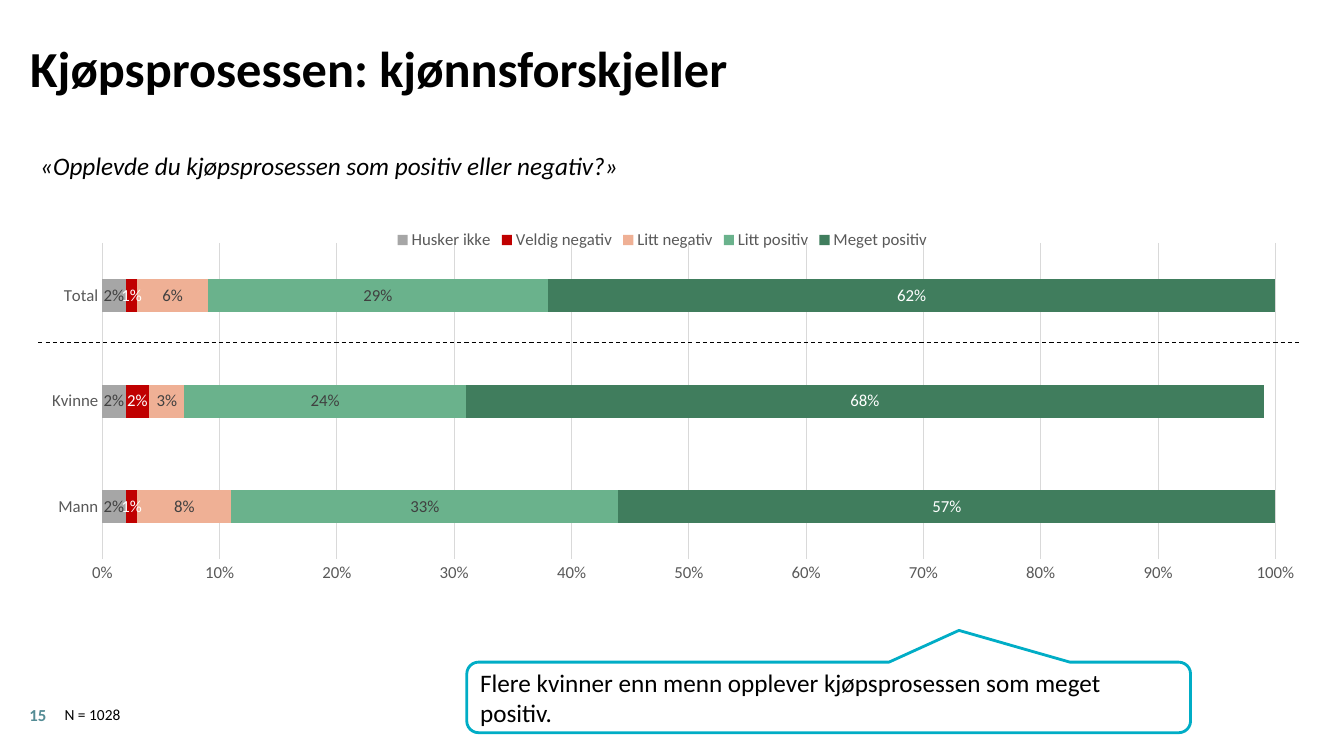
from lxml import etree
from pptx import Presentation
from pptx.chart.data import CategoryChartData
from pptx.dml.color import RGBColor
from pptx.enum.chart import XL_CHART_TYPE, XL_LABEL_POSITION, XL_LEGEND_POSITION, XL_TICK_MARK
from pptx.enum.dml import MSO_LINE
from pptx.enum.shapes import MSO_CONNECTOR, MSO_SHAPE
from pptx.enum.text import MSO_ANCHOR, PP_ALIGN
from pptx.oxml import parse_xml
from pptx.oxml.ns import nsdecls, qn
from pptx.util import Pt

STACKED = XL_CHART_TYPE.BAR_STACKED
CENTER = XL_LABEL_POSITION.CENTER
LEGEND_TOP = XL_LEGEND_POSITION.TOP
NO_TICK = XL_TICK_MARK.NONE
DASH = MSO_LINE.DASH
STRAIGHT = MSO_CONNECTOR.STRAIGHT
CALLOUT = MSO_SHAPE.ROUNDED_RECTANGULAR_CALLOUT
TOP, MIDDLE, BOTTOM = MSO_ANCHOR.TOP, MSO_ANCHOR.MIDDLE, MSO_ANCHOR.BOTTOM
LEFT = PP_ALIGN.LEFT

FONT = "Calibri"
BLACK = RGBColor(0x00, 0x00, 0x00)
WHITE = RGBColor(0xFF, 0xFF, 0xFF)
DARK = RGBColor(0x40, 0x40, 0x40)
GRAY = RGBColor(0x59, 0x59, 0x59)
GRID = RGBColor(0xD9, 0xD9, 0xD9)
TEAL = RGBColor(0x54, 0x8C, 0x95)
CYAN = RGBColor(0x00, 0xAD, 0xC6)

GROUPS = ["Mann", "Kvinne", "Total"]
ANSWERS = [
    ("Husker ikke", (0.02, 0.02, 0.02), RGBColor(0xA6, 0xA6, 0xA6), DARK),
    ("Veldig negativ", (0.01, 0.02, 0.01), RGBColor(0xC0, 0x00, 0x00), WHITE),
    ("Litt negativ", (0.08, 0.03, 0.06), RGBColor(0xEF, 0xB0, 0x95), DARK),
    ("Litt positiv", (0.33, 0.24, 0.29), RGBColor(0x6A, 0xB2, 0x8C), DARK),
    ("Meget positiv", (0.57, 0.68, 0.62), RGBColor(0x40, 0x7D, 0x5D), WHITE),
]
PLOT = {"x": 0.057, "y": 0.065, "w": 0.928, "h": 0.843}


def points(*box):
    return [Pt(value) for value in box]


def style(font, size, color, bold=False, italic=False):
    font.name, font.size = FONT, Pt(size)
    font.bold, font.italic = bold, italic
    font.color.rgb = color


def write(shape, text, size=18, color=BLACK, anchor=MIDDLE, inset=None,
          spacing=None, **look):
    frame = shape.text_frame
    frame.word_wrap = True
    frame.vertical_anchor = anchor
    if inset is not None:
        frame.margin_left = frame.margin_right = Pt(inset)
        frame.margin_top = frame.margin_bottom = Pt(inset)
    para = frame.paragraphs[0]
    para.alignment = LEFT
    if spacing:
        para.line_spacing = spacing
    run = para.add_run()
    run.text = text
    style(run.font, size, color, **look)


def add_text(slide, box, text, **look):
    write(slide.shapes.add_textbox(*points(*box)), text, **look)


def add_head(slide, box):
    left, top, width, height = box
    add_text(slide, (left, top, width, 45.5), "Kjøpsprosessen: kjønnsforskjeller",
             size=36, bold=True, anchor=BOTTOM, inset=0, spacing=1.1)
    add_text(slide, (left, top + height - 29, width, 29),
             "«Opplevde du kjøpsprosessen som positiv eller negativ?»", italic=True)


def set_plot(chart):
    """Fix the inner plot area as fractions of the chart."""
    area = chart.element.find(".//" + qn("c:plotArea"))
    old = area.find(qn("c:layout"))
    if old is not None:
        area.remove(old)
    layout = parse_xml(f"<c:layout {nsdecls('c')}><c:manualLayout/></c:layout>")
    parts = [("layoutTarget", "inner"), ("xMode", "edge"), ("yMode", "edge")]
    for tag, value in parts + list(PLOT.items()):
        etree.SubElement(layout[0], qn("c:" + tag)).set("val", str(value))
    area.insert(0, layout)


def set_axes(chart):
    groups, share = chart.category_axis, chart.value_axis
    for axis in (groups, share):
        axis.major_tick_mark = axis.minor_tick_mark = NO_TICK
        style(axis.tick_labels.font, 12, GRAY)
    share.minimum_scale, share.maximum_scale, share.major_unit = 0, 1, 0.1
    share.tick_labels.number_format = "0%"
    share.tick_labels.number_format_is_linked = False
    share.format.line.fill.background()
    share.has_major_gridlines = True
    for part in (groups, share.major_gridlines):
        part.format.line.color.rgb = GRID
        part.format.line.width = Pt(0.75)


def add_bars(slide, box):
    data = CategoryChartData(number_format="0%")
    data.categories = GROUPS
    for name, values, _, _ in ANSWERS:
        data.add_series(name, values)
    chart = slide.shapes.add_chart(STACKED, *points(*box), data).chart
    style(chart.font, 10, BLACK)
    chart.has_title = False
    chart.has_legend = True
    chart.legend.position = LEGEND_TOP
    chart.legend.include_in_layout = False
    style(chart.legend.font, 12, GRAY)
    bars = chart.plots[0]
    bars.gap_width, bars.overlap, bars.vary_by_categories = 219, 100, False
    for series, (_, _, fill, ink) in zip(bars.series, ANSWERS):
        series.format.fill.solid()
        series.format.fill.fore_color.rgb = fill
        labels = series.data_labels
        labels.show_value = True
        labels.position = CENTER
        labels.number_format = "0%"
        labels.number_format_is_linked = False
        style(labels.font, 12, ink)
    set_axes(chart)
    set_plot(chart)


def add_rule(slide, left, right, top):
    rule = slide.shapes.add_connector(STRAIGHT, *points(left, top, right, top))
    rule.line.color.rgb = BLACK
    rule.line.width = Pt(0.75)
    rule.line.dash_style = DASH
    etree.SubElement(rule.element.spPr, qn("a:effectLst"))


def add_note(slide, box):
    note = slide.shapes.add_shape(CALLOUT, *points(*box))
    note.shadow.inherit = False
    note.adjustments[0], note.adjustments[1], note.adjustments[2] = 0.18, -0.95, 0.167
    note.fill.solid()
    note.fill.fore_color.rgb = WHITE
    note.line.color.rgb = CYAN
    note.line.width = Pt(2)
    write(note, "Flere kvinner enn menn opplever kjøpsprosessen som meget positiv.")


def add_foot(slide, box):
    left, top, width, height = box
    add_text(slide, (left, top + 3, 18, 14.5), "15", size=12, color=TEAL,
             bold=True, inset=0)
    add_text(slide, (left + 18, top, width - 18, height), "N = 1028",
             size=11, anchor=TOP)


def main():
    deck = Presentation()
    deck.slide_width, deck.slide_height = Pt(960), Pt(540)
    slide = deck.slides.add_slide(deck.slide_layouts[6])
    add_foot(slide, (21, 500.4, 894, 21))
    add_bars(slide, (21.6, 156.2, 903, 268))
    add_head(slide, (21.6, 24.5, 919.5, 108))
    add_rule(slide, 27.4, 930.2, 244.4)
    add_note(slide, (333.4, 473, 517, 50.4))
    deck.save("out.pptx")


if __name__ == "__main__":
    main()
